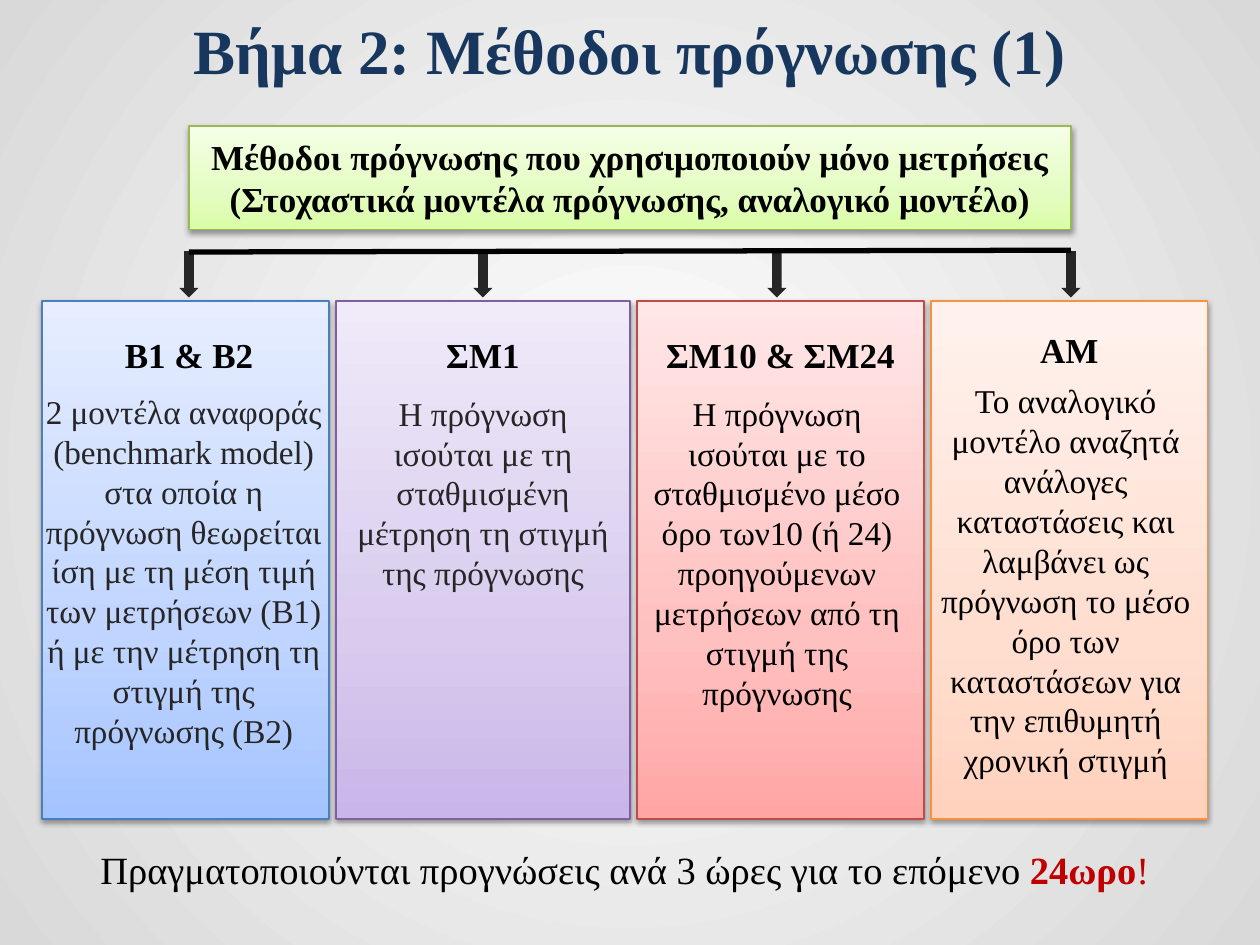
from lxml.etree import SubElement
from pptx import Presentation
from pptx.dml.color import RGBColor as Rgb
from pptx.enum.shapes import MSO_CONNECTOR as Connector, MSO_SHAPE as Preset
from pptx.enum.text import MSO_ANCHOR as Anchor, MSO_AUTO_SIZE as AutoSize, PP_ALIGN as Align
from pptx.oxml.ns import qn
from pptx.util import Pt

BLACK = Rgb(0x00, 0x00, 0x00)
CHARCOAL = Rgb(0x26, 0x26, 0x26)
NAVY = Rgb(0x17, 0x37, 0x5E)
RED = Rgb(0xC0, 0x00, 0x00)
WHITE = Rgb(0xFF, 0xFF, 0xFF)
GREY = Rgb(0xD9, 0xD9, 0xD9)
GREEN_LINE = Rgb(0x98, 0xB9, 0x55)
BLUE_LINE = Rgb(0x4B, 0x7E, 0xBC)
PURPLE_LINE = Rgb(0x7D, 0x60, 0xA0)
RED_LINE = Rgb(0xBF, 0x4C, 0x48)
ORANGE_LINE = Rgb(0xF6, 0x92, 0x40)
GREENS = (Rgb(0xDA, 0xFD, 0xA7), Rgb(0xE4, 0xFC, 0xC2), Rgb(0xF5, 0xFF, 0xE7))
BLUES = (Rgb(0xA4, 0xC4, 0xFF), Rgb(0xBF, 0xD4, 0xFF), Rgb(0xE6, 0xEE, 0xFF))
PURPLES = (Rgb(0xC9, 0xB5, 0xE8), Rgb(0xD8, 0xCB, 0xEE), Rgb(0xF0, 0xEA, 0xF9))
REDS = (Rgb(0xFF, 0xA6, 0xA5), Rgb(0xFF, 0xC0, 0xBF), Rgb(0xFF, 0xE7, 0xE7))
ORANGES = (Rgb(0xFF, 0xD2, 0xBD), Rgb(0xFF, 0xDE, 0xD0), Rgb(0xFF, 0xF2, 0xED))

COLUMN_TOP, COLUMN_HEIGHT = 172, 296
FIRST_ARROW, ARROW_STEP = 108, 168
METHODS = [
    dict(left=24, width=164, colors=BLUES, line=BLUE_LINE,
         heading="Β1 & Β2", heading_at=(45, 187, 126, 32),
         body="2 μοντέλα αναφοράς (benchmark model) στα οποία η πρόγνωση θεωρείται "
              "ίση με τη μέση τιμή των μετρήσεων (Β1) ή με την μέτρηση τη στιγμή της "
              "πρόγνωσης (Β2)",
         body_at=(18, 220, 174, 215), ink=CHARCOAL),
    dict(left=192, width=168, colors=PURPLES, line=PURPLE_LINE,
         heading="ΣΜ1", heading_at=(213, 187, 126, 32),
         body="Η πρόγνωση ισούται με τη σταθμισμένη μέτρηση τη στιγμή της πρόγνωσης",
         body_at=(192, 221, 168, 122), ink=CHARCOAL),
    dict(left=364, width=164, colors=REDS, line=RED_LINE,
         heading="ΣΜ10 & ΣΜ24", heading_at=(372, 187, 148, 32),
         body="Η πρόγνωση ισούται με το σταθμισμένο μέσο όρο των10 (ή 24) "
              "προηγούμενων μετρήσεων από τη στιγμή της πρόγνωσης",
         body_at=(360, 221, 168, 192), ink=BLACK),
    dict(left=532, width=158, colors=ORANGES, line=ORANGE_LINE,
         heading="ΑΜ", heading_at=(548, 184, 126, 32),
         body="Το αναλογικό μοντέλο αναζητά ανάλογες καταστάσεις και λαμβάνει ως "
              "πρόγνωση το μέσο όρο των καταστάσεων για την επιθυμητή χρονική στιγμή",
         body_at=(522, 214, 174, 238), ink=BLACK),
]


def set_gradient(fill, owner, stops):
    fill.gradient()
    gradient = owner.find(".//" + qn("a:gradFill"))
    for child in list(gradient):
        gradient.remove(child)
    stop_list = SubElement(gradient, qn("a:gsLst"))
    for position, color in stops:
        stop = SubElement(stop_list, qn("a:gs"), pos=str(position * 1000))
        SubElement(stop, qn("a:srgbClr"), val=str(color))
    return gradient


class SlideBuilder:
    font_name = "Times New Roman"

    def __init__(self, slide):
        self.slide = slide

    def background(self, center, edge):
        gradient = set_gradient(self.slide.background.fill, self.slide._element,
                                [(0, center), (100, edge)])
        circle = SubElement(gradient, qn("a:path"), path="circle")
        SubElement(circle, qn("a:fillToRect"),
                   dict.fromkeys(("l", "t", "r", "b"), "50000"))

    def set_text(self, frame, text, size, color, bold=False, anchor=Anchor.TOP):
        frame.word_wrap = True
        frame.vertical_anchor = anchor
        frame.text = text
        paragraph = frame.paragraphs[0]
        paragraph.alignment = Align.CENTER
        self.style(paragraph.runs[0], size, color, bold)
        return paragraph

    def style(self, run, size, color, bold):
        run.font.name = self.font_name
        run.font.size = Pt(size)
        run.font.color.rgb = color
        run.font.bold = bold

    def title(self, text, at, size, color):
        title = self.slide.shapes.title
        title.left, title.top, title.width, title.height = map(Pt, at)
        title.text_frame.auto_size = AutoSize.NONE
        self.set_text(title.text_frame, text, size, color, True, Anchor.MIDDLE)

    def panel(self, at, colors, line):
        panel = self.slide.shapes.add_shape(Preset.RECTANGLE, *map(Pt, at))
        gradient = set_gradient(panel.fill, panel._element, zip((0, 35, 100), colors))
        SubElement(gradient, qn("a:lin"), ang="16200000", scaled="0")
        panel.line.color.rgb = line
        panel.line.width = Pt(0.75)
        panel.shadow.inherit = False
        effects = panel._element.spPr.find(qn("a:effectLst"))
        shadow = SubElement(effects, qn("a:outerShdw"), blurRad="40000",
                            dist="20000", dir="5400000", rotWithShape="0")
        shade = SubElement(shadow, qn("a:srgbClr"), val=str(BLACK))
        SubElement(shade, qn("a:alpha"), val="38000")
        return panel

    def label(self, text, at, size, color, bold=False):
        label = self.slide.shapes.add_textbox(*map(Pt, at))
        paragraph = self.set_text(label.text_frame, text, size, color, bold)
        label.text_frame.auto_size = AutoSize.SHAPE_TO_FIT_TEXT
        return paragraph

    def down_arrow(self, center, top, width, height, color):
        arrow = self.slide.shapes.add_shape(
            Preset.DOWN_ARROW, Pt(center - width / 2), Pt(top), Pt(width), Pt(height))
        arrow.fill.solid()
        arrow.fill.fore_color.rgb = color
        arrow.line.fill.background()
        arrow.shadow.inherit = False

    def connect(self, start, end, color, width):
        connector = self.slide.shapes.add_connector(
            Connector.STRAIGHT, *map(Pt, (*start, *end)))
        connector.line.color.rgb = color
        connector.line.width = Pt(width)
        SubElement(connector._element.spPr, qn("a:effectLst"))


def main():
    deck = Presentation()
    deck.slide_width, deck.slide_height = Pt(720), Pt(540)
    builder = SlideBuilder(deck.slides.add_slide(deck.slide_layouts[5]))
    builder.background(WHITE, GREY)
    builder.title("Βήμα 2: Μέθοδοι πρόγνωσης (1)", (36, 0, 648, 56), 36, NAVY)

    family = builder.panel((108, 72, 504, 59), GREENS, GREEN_LINE)
    builder.set_text(family.text_frame,
                     "Μέθοδοι πρόγνωσης που χρησιμοποιούν μόνο μετρήσεις "
                     "(Στοχαστικά μοντέλα πρόγνωσης, αναλογικό μοντέλο)",
                     20, BLACK, True, Anchor.MIDDLE)

    for index, method in enumerate(METHODS):
        builder.panel((method["left"], COLUMN_TOP, method["width"], COLUMN_HEIGHT),
                      method["colors"], method["line"])
        builder.label(method["heading"], method["heading_at"], 20, BLACK, True)
        builder.label(method["body"], method["body_at"], 19, method["ink"])
        builder.down_arrow(FIRST_ARROW + index * ARROW_STEP, 143.5, 11, 26.5, CHARCOAL)
    builder.connect((108, 144), (612, 143), BLACK, 3)

    closing = builder.label("Πραγματοποιούνται προγνώσεις ανά 3 ώρες για το επόμενο ",
                            (24, 480, 666, 34), 22, BLACK)
    for text, bold in (("24ωρο", True), ("!", False)):
        run = closing.add_run()
        run.text = text
        builder.style(run, 22, RED, bold)

    deck.save("out.pptx")


if __name__ == "__main__":
    main()
